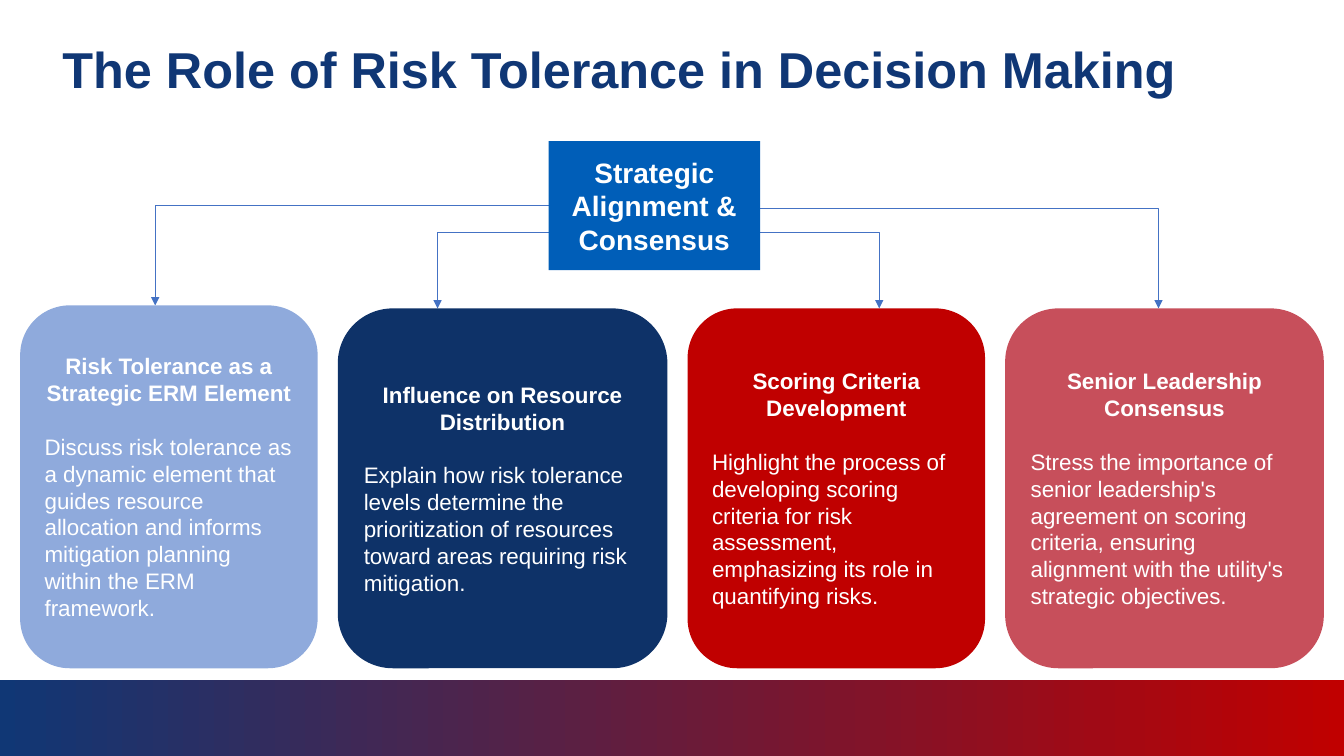
from lxml.etree import SubElement
from pptx import Presentation
from pptx.dml.color import RGBColor
from pptx.enum.shapes import MSO_CONNECTOR, MSO_SHAPE
from pptx.enum.text import MSO_ANCHOR, MSO_AUTO_SIZE, PP_ALIGN
from pptx.oxml.ns import qn
from pptx.util import Inches, Pt

WHITE = RGBColor(0xFF, 0xFF, 0xFF)
TITLE_BLUE = RGBColor(0x10, 0x37, 0x75)
HUB_BLUE = RGBColor(0x00, 0x5E, 0xB8)
ARROW_BLUE = RGBColor(0x44, 0x72, 0xC4)
LIGHT_BLUE = RGBColor(0x8F, 0xAA, 0xDC)
NAVY = RGBColor(0x0E, 0x32, 0x68)
RED = RGBColor(0xC0, 0x00, 0x00)
ROSE = RGBColor(0xC7, 0x4F, 0x5B)

# Lengths are percentages of the slide's width and height
GUTTER = 1.5
CARD_BOTTOM = 88.4
HUB = (40.81, 18.67, 15.75, 17.07)

# Top, width, fill, heading, body
CARDS = [
    (40.4, 22.13, LIGHT_BLUE, "Risk Tolerance as a Strategic ERM Element",
     "Discuss risk tolerance as a dynamic element that guides resource allocation "
     "and informs mitigation planning within the ERM framework."),
    (40.8, 24.53, NAVY, "Influence on Resource Distribution",
     "Explain how risk tolerance levels determine the prioritization of resources "
     "toward areas requiring risk mitigation."),
    (40.8, 22.13, RED, "Scoring Criteria Development",
     "Highlight the process of developing scoring criteria for risk assessment, "
     "emphasizing its role in quantifying risks."),
    (40.8, 23.71, ROSE, "Senior Leadership Consensus",
     "Stress the importance of senior leadership's agreement on scoring criteria, "
     "ensuring alignment with the utility's strategic objectives."),
]

# Start x and y, end x and y
ARROWS = [
    (48.16, 27.2, 11.55, 40.4),
    (55.66, 30.8, 32.56, 40.8),
    (48.09, 27.6, 86.2, 40.8),
    (40.89, 30.8, 65.42, 40.8),
]


class SlideBuilder:
    font_name = "Arial"

    def __init__(self, presentation):
        self.width = presentation.slide_width
        self.height = presentation.slide_height
        self.slide = presentation.slides.add_slide(presentation.slide_layouts[5])

    def place(self, left, top, width, height):
        return (int(self.width * left / 100), int(self.height * top / 100),
                int(self.width * width / 100), int(self.height * height / 100))

    def style(self, paragraph, size, color=WHITE, bold=True, align=PP_ALIGN.CENTER):
        paragraph.alignment = align
        font = paragraph.font
        font.name, font.size, font.bold = self.font_name, Pt(size), bold
        font.color.rgb = color

    def title(self, text, *area):
        shape = self.slide.shapes.title
        shape.left, shape.top, shape.width, shape.height = self.place(*area)
        frame = shape.text_frame
        frame.text = text
        frame.auto_size = MSO_AUTO_SIZE.NONE
        frame.vertical_anchor = MSO_ANCHOR.TOP
        frame.margin_left = frame.margin_top = 0
        frame.margin_right = frame.margin_bottom = 0
        paragraph = frame.paragraphs[0]
        paragraph.line_spacing = Pt(38)
        self.style(paragraph, 36, TITLE_BLUE, align=PP_ALIGN.LEFT)

    def block(self, kind, area, color=None):
        shape = self.slide.shapes.add_shape(kind, *self.place(*area))
        shape.shadow.inherit = False
        shape.line.fill.background()
        if color is not None:
            shape.fill.solid()
            shape.fill.fore_color.rgb = color
        shape.text_frame.word_wrap = True
        shape.text_frame.vertical_anchor = MSO_ANCHOR.MIDDLE
        return shape

    def band(self, area, colors):
        fill = self.block(MSO_SHAPE.RECTANGLE, area).fill
        fill.gradient()
        fill.gradient_angle = 0
        for stop, color in zip(fill.gradient_stops, colors):
            stop.color.rgb = color

    def hub(self, text, area):
        frame = self.block(MSO_SHAPE.RECTANGLE, area, HUB_BLUE).text_frame
        frame.text = text
        self.style(frame.paragraphs[0], 20)

    def card(self, area, color, heading, body):
        frame = self.block(MSO_SHAPE.ROUNDED_RECTANGLE, area, color).text_frame
        frame.text = heading
        self.style(frame.paragraphs[0], 16)
        frame.paragraphs[0].space_after = Pt(19)
        paragraph = frame.add_paragraph()
        paragraph.text = body
        self.style(paragraph, 16, bold=False, align=PP_ALIGN.LEFT)

    def arrow(self, *ends):
        connector = self.slide.shapes.add_connector(
            MSO_CONNECTOR.ELBOW, *self.place(*ends))
        connector.line.color.rgb = ARROW_BLUE
        connector.line.width = Pt(0.5)
        properties = connector._element.spPr
        # One bend: across, then down
        properties.find(qn("a:prstGeom")).set("prst", "bentConnector2")
        SubElement(properties.find(qn("a:ln")), qn("a:tailEnd"), type="triangle")
        SubElement(properties, qn("a:effectLst"))


def main():
    presentation = Presentation()
    presentation.slide_width = Inches(13.33)
    presentation.slide_height = Inches(7.5)
    builder = SlideBuilder(presentation)

    # Footer band and title
    builder.band((0, 90, 100, 10), (TITLE_BLUE, RED))
    builder.title("The Role of Risk Tolerance in Decision Making",
                  4.65, 6, 88.15, 9.73)

    # Arrows run beneath the hub
    for ends in ARROWS:
        builder.arrow(*ends)
    builder.hub("Strategic Alignment & Consensus", HUB)

    # Row of cards
    left = GUTTER
    for top, width, color, heading, body in CARDS:
        builder.card((left, top, width, CARD_BOTTOM - top), color, heading, body)
        left += width + GUTTER

    presentation.save("out.pptx")


if __name__ == "__main__":
    main()
